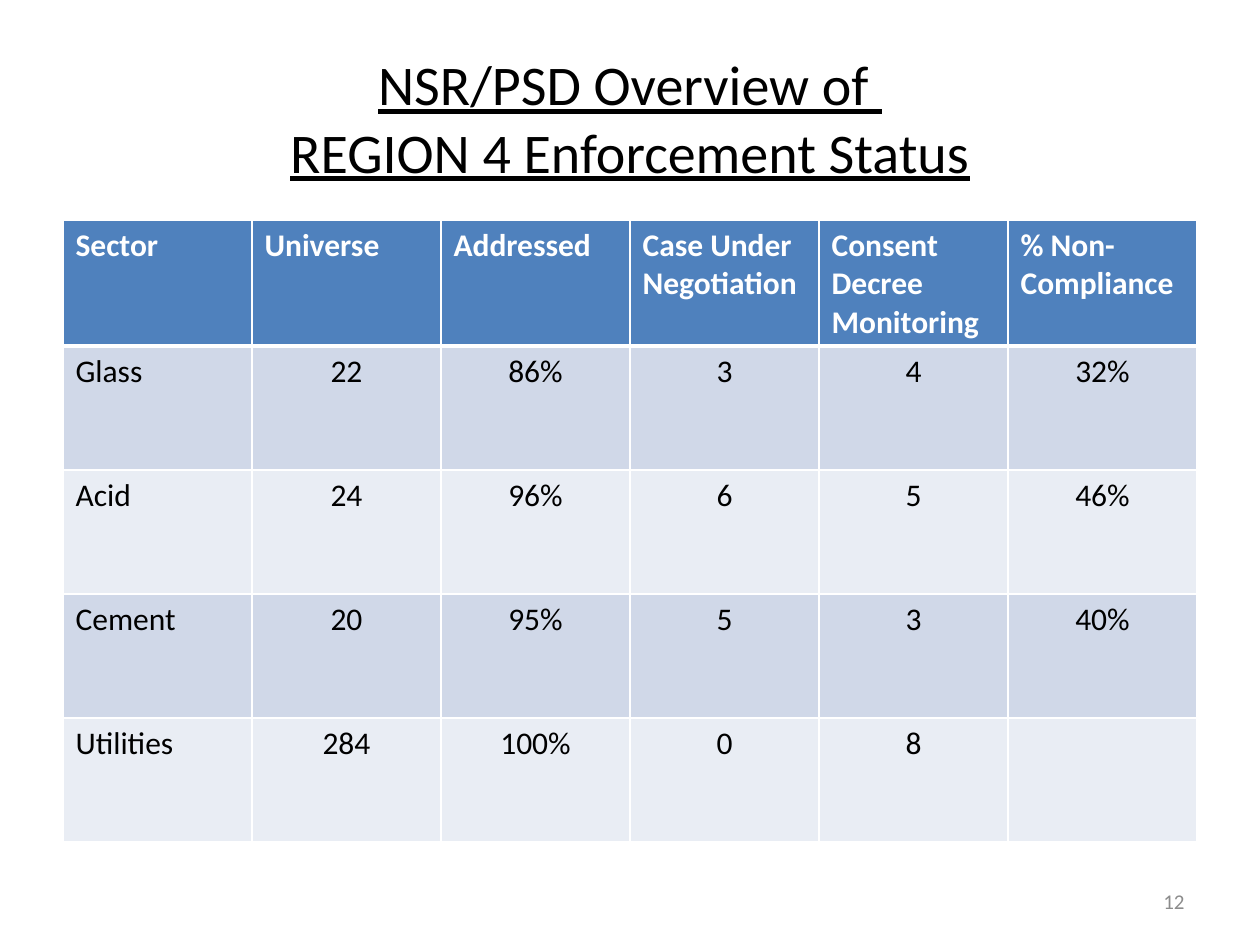
from lxml.etree import SubElement
from pptx import Presentation
from pptx.dml.color import RGBColor
from pptx.enum.text import MSO_ANCHOR, PP_ALIGN
from pptx.oxml.ns import qn
from pptx.util import Pt

EMU_PER_PX = 914400 / 126
WHITE = RGBColor(0xFF, 0xFF, 0xFF)
BLACK = RGBColor(0x00, 0x00, 0x00)
GRAY = RGBColor(0x8C, 0x8C, 0x8C)
HEADER_BLUE = RGBColor(0x4F, 0x81, 0xBD)
BANDS = (RGBColor(0xD0, 0xD8, 0xE8), RGBColor(0xE9, 0xED, 0xF4))

TITLE_LINES = ("NSR/PSD Overview of ", "REGION 4 Enforcement Status")
HEADERS = ("Sector", "Universe", "Addressed", "Case Under Negotiation",
           "Consent Decree Monitoring", "% Non-Compliance")
SECTORS = (
    ("Glass", "22", "86%", "3", "4", "32%"),
    ("Acid", "24", "96%", "6", "5", "46%"),
    ("Cement", "20", "95%", "5", "3", "40%"),
    ("Utilities", "284", "100%", "0", "8", ""),
)


def px(length):
    return round(length * EMU_PER_PX)


class SlideBuilder:
    font = "Calibri"
    cell_size = 18
    thin, thick = 1, 3

    def __init__(self, slide):
        self.slide = slide

    def span(self, para, text, size, color, bold=False, underline=False):
        span = para.add_run()
        span.text = text
        span.font.name = self.font
        span.font.size = Pt(size)
        span.font.color.rgb = color
        span.font.bold = bold
        span.font.underline = underline

    def text(self, bounds, lines, size, color, align, underline=False):
        """Add a middle-anchored box whose lines share one paragraph."""
        box = self.slide.shapes.add_textbox(*map(px, bounds))
        frame = box.text_frame
        frame.word_wrap = True
        frame.vertical_anchor = MSO_ANCHOR.MIDDLE
        para = frame.paragraphs[0]
        para.alignment = align
        for index, line in enumerate(lines):
            if index:
                para.add_line_break()
            self.span(para, line, size, color, underline=underline)

    def borders(self, cell, top, bottom):
        properties = cell._tc.get_or_add_tcPr()
        widths = {"a:lnL": self.thin, "a:lnR": self.thin, "a:lnT": top, "a:lnB": bottom}
        for tag, width in widths.items():
            line = SubElement(properties, qn(tag), w=str(Pt(width)))
            fill = SubElement(line, qn("a:solidFill"))
            SubElement(fill, qn("a:srgbClr"), val=str(WHITE))

    def cell(self, cell, text, row, column):
        is_header = row == 0
        self.borders(cell,
                     top=self.thick if row == 1 else self.thin,
                     bottom=self.thick if is_header else self.thin)
        cell.fill.solid()
        cell.fill.fore_color.rgb = HEADER_BLUE if is_header else BANDS[(row - 1) % 2]
        para = cell.text_frame.paragraphs[0]
        centered = not is_header and column > 0
        para.alignment = PP_ALIGN.CENTER if centered else PP_ALIGN.LEFT
        if text:
            self.span(para, text, self.cell_size, WHITE if is_header else BLACK, bold=is_header)
        else:
            para.font.size = Pt(self.cell_size)

    def table(self, left, top, column_width, row_height, rows):
        columns = len(rows[0])
        frame = self.slide.shapes.add_table(
            len(rows), columns, px(left), px(top),
            px(column_width * columns), px(row_height * len(rows)))
        table = frame.table
        for column in table.columns:
            column.width = px(column_width)
        for row, values in enumerate(rows):
            table.rows[row].height = px(row_height)
            for column, text in enumerate(values):
                self.cell(table.cell(row, column), text, row, column)


def main():
    deck = Presentation()
    deck.slide_width, deck.slide_height = px(1260), px(945)
    page = SlideBuilder(deck.slides.add_slide(deck.slide_layouts[6]))
    page.text((63, 38, 1134, 158), TITLE_LINES, 32, BLACK, PP_ALIGN.CENTER, underline=True)
    page.table(63, 220, 189, 124, (HEADERS, *SECTORS))
    page.text((903, 876, 294, 50), ("12",), 12, GRAY, PP_ALIGN.RIGHT)
    deck.save("out.pptx")


if __name__ == "__main__":
    main()
